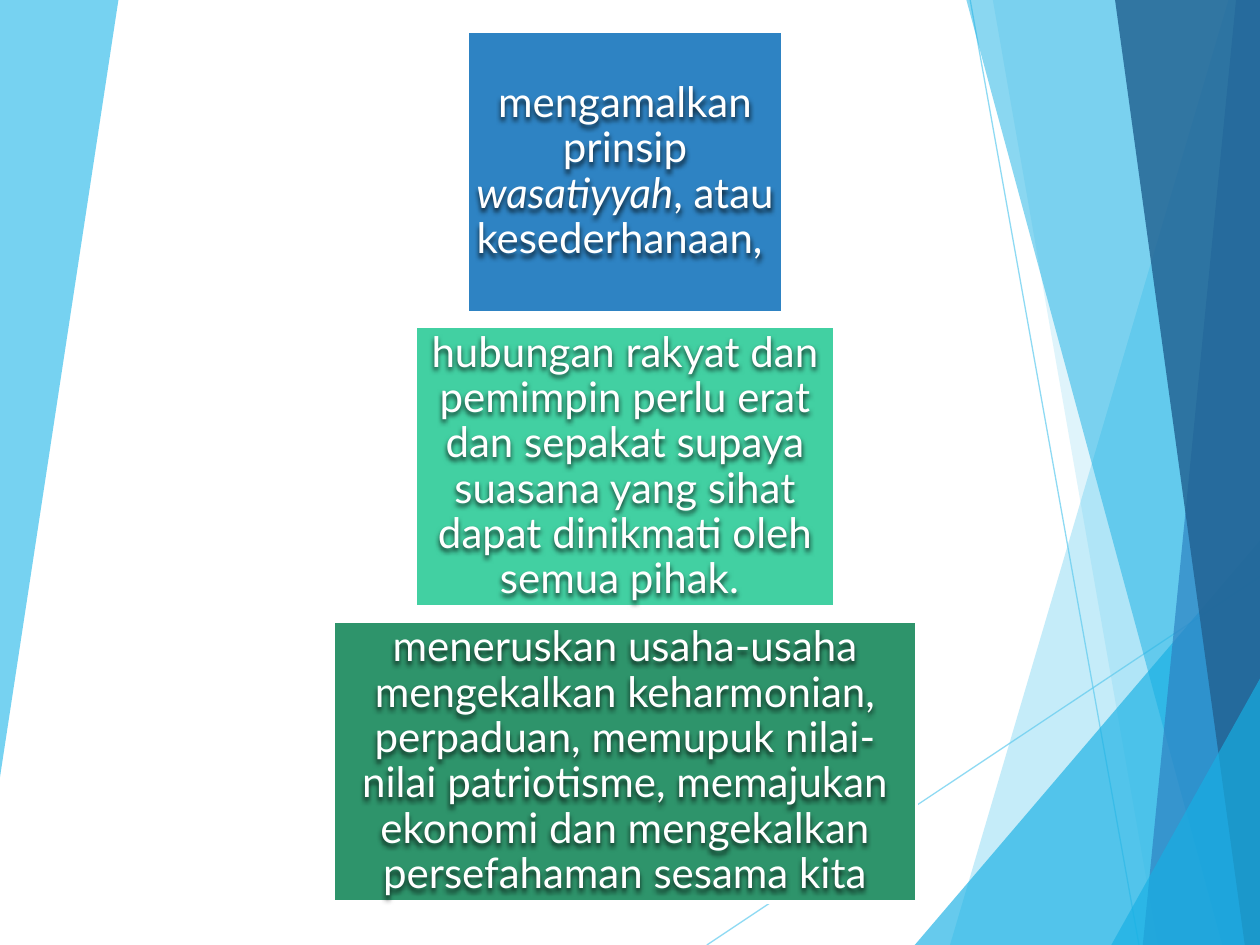
from dataclasses import dataclass

from lxml.etree import SubElement
from pptx import Presentation
from pptx.dml.color import RGBColor
from pptx.enum.shapes import MSO_CONNECTOR as Connector, MSO_SHAPE as Preset
from pptx.enum.text import MSO_ANCHOR as Anchor, PP_ALIGN as Align
from pptx.oxml.ns import qn
from pptx.util import Inches, Pt


@dataclass(frozen=True)
class Theme:
    sky: str = "5FCBEF"
    cyan: str = "17B0E4"
    blue: str = "2E83C3"
    navy: str = "226292"
    mint: str = "42D0A2"
    green: str = "2E946B"
    white: str = "FFFFFF"
    shadow: str = "000000"
    font: str = "Lato"
    text_size: float = 24
    ray_width: float = 0.75
    border_width: float = 2


@dataclass(frozen=True)
class Ray:
    start: tuple[float, float]
    end: tuple[float, float]


@dataclass(frozen=True)
class Facet:
    corners: tuple[tuple[float, float], ...]
    color: str
    opacity: int


@dataclass(frozen=True)
class Phrase:
    wording: str
    italic: bool = False


@dataclass(frozen=True)
class Tier:
    width: float
    color: str
    phrases: tuple[Phrase, ...]


THEME = Theme()
SLIDE_WIDTH, SLIDE_HEIGHT = 10, 7.5
TIER_CENTER, TIER_TOP, TIER_HEIGHT, TIER_STEP = 4.96, 0.25, 2.23, 2.34
TIER_INSET = 0.07

RAYS = (
    Ray((5.61, 7.5), (10.01, 4.57)),
    Ray((7.7, 0), (9.04, 7.5)),
)
FACETS = (
    Facet(((9.75, 0), (7.54, 7.5), (10.01, 7.5), (10.01, 0)), THEME.sky, 36),
    Facet(((7.88, 0), (9.19, 7.5), (10.01, 7.5), (10.01, 0)), THEME.sky, 20),
    Facet(((7.26, 7.5), (10, 4.29), (10.01, 7.5)), THEME.cyan, 66),
    Facet(((7.67, 0), (9.7, 7.5), (10.01, 7.5), (10.01, 0)), THEME.cyan, 50),
    Facet(((9.81, 0), (9.07, 7.5), (10.01, 7.5), (10.01, 0)), THEME.blue, 70),
    Facet(((8.85, 0), (9.88, 7.5), (10.01, 7.5), (10.01, 0)), THEME.navy, 82),
    Facet(((8.82, 7.5), (10.02, 5.35), (10.02, 7.5)), THEME.cyan, 66),
    Facet(((0, 0), (0.94, 0), (0, 6.17)), THEME.sky, 85),
)
TIERS = (
    Tier(2.51, THEME.blue, (
        Phrase("mengamalkan prinsip "),
        Phrase("wasatiyyah", italic=True),
        Phrase(", atau kesederhanaan, "),
    )),
    Tier(3.33, THEME.mint, (
        Phrase("hubungan rakyat dan pemimpin perlu erat dan sepakat supaya "
               "suasana yang sihat dapat dinikmati oleh semua pihak. "),
    )),
    Tier(4.63, THEME.green, (
        Phrase("meneruskan usaha-usaha mengekalkan keharmonian, perpaduan, "
               "memupuk nilai-nilai patriotisme, memajukan ekonomi dan "
               "mengekalkan persefahaman sesama kita"),
    )),
)


def set_opacity(properties, percent: int) -> None:
    """Make the solid colour inside the properties partly transparent."""
    color = next(properties.iter(qn("a:srgbClr")))
    SubElement(color, qn("a:alpha"), val=str(percent * 1000))


def draw_ray(slide, ray: Ray) -> None:
    """Draw a thin translucent line across the background."""
    line = slide.shapes.add_connector(
        Connector.STRAIGHT, *map(Inches, ray.start + ray.end))
    line.line.color.rgb = RGBColor.from_string(THEME.sky)
    line.line.width = Pt(THEME.ray_width)
    properties = line._element.spPr
    set_opacity(properties, 70)
    SubElement(properties, qn("a:effectLst"))


def draw_facet(slide, facet: Facet) -> None:
    """Draw a translucent polygon of the background."""
    first, *rest = [(Inches(x), Inches(y)) for x, y in facet.corners]
    builder = slide.shapes.build_freeform(*first)
    builder.add_line_segments(rest, close=True)
    polygon = builder.convert_to_shape()
    polygon.shadow.inherit = False
    polygon.fill.solid()
    polygon.fill.fore_color.rgb = RGBColor.from_string(facet.color)
    polygon.line.fill.background()
    set_opacity(polygon._element.spPr, facet.opacity)


def add_text_shadow(caption) -> None:
    """Give an unfilled text box a soft shadow that falls from its letters."""
    effects = SubElement(caption._element.spPr, qn("a:effectLst"))
    shadow = SubElement(effects, qn("a:outerShdw"), blurRad="38100",
                        dist="25400", dir="5400000", rotWithShape="0")
    color = SubElement(shadow, qn("a:srgbClr"), val=THEME.shadow)
    SubElement(color, qn("a:alpha"), val="75000")


def draw_tier(slide, tier: Tier, top: float) -> None:
    """Draw one coloured block with its centred caption."""
    bounds = [Inches(n) for n in
              (TIER_CENTER - tier.width / 2, top, tier.width, TIER_HEIGHT)]
    block = slide.shapes.add_shape(Preset.RECTANGLE, *bounds)
    block.shadow.inherit = False
    block.fill.solid()
    block.fill.fore_color.rgb = RGBColor.from_string(tier.color)
    block.line.color.rgb = RGBColor.from_string(THEME.white)
    block.line.width = Pt(THEME.border_width)

    caption = slide.shapes.add_textbox(*bounds)
    add_text_shadow(caption)
    frame = caption.text_frame
    frame.word_wrap = True
    frame.vertical_anchor = Anchor.MIDDLE
    frame.margin_left = frame.margin_right = Inches(TIER_INSET)
    frame.margin_top = frame.margin_bottom = Inches(TIER_INSET)
    paragraph = frame.paragraphs[0]
    paragraph.alignment = Align.CENTER
    paragraph.line_spacing = 0.9
    for phrase in tier.phrases:
        run = paragraph.add_run()
        run.text = phrase.wording
        run.font.name = THEME.font
        run.font.size = Pt(THEME.text_size)
        run.font.italic = phrase.italic
        run.font.color.rgb = RGBColor.from_string(THEME.white)


def main() -> None:
    """Build the slide and save it."""
    deck = Presentation()
    deck.slide_width = Inches(SLIDE_WIDTH)
    deck.slide_height = Inches(SLIDE_HEIGHT)
    slide = deck.slides.add_slide(deck.slide_layouts.get_by_name("Blank"))
    for ray in RAYS:
        draw_ray(slide, ray)
    for facet in FACETS:
        draw_facet(slide, facet)
    for row, tier in enumerate(TIERS):
        draw_tier(slide, tier, TIER_TOP + row * TIER_STEP)
    deck.save("out.pptx")


if __name__ == "__main__":
    main()
